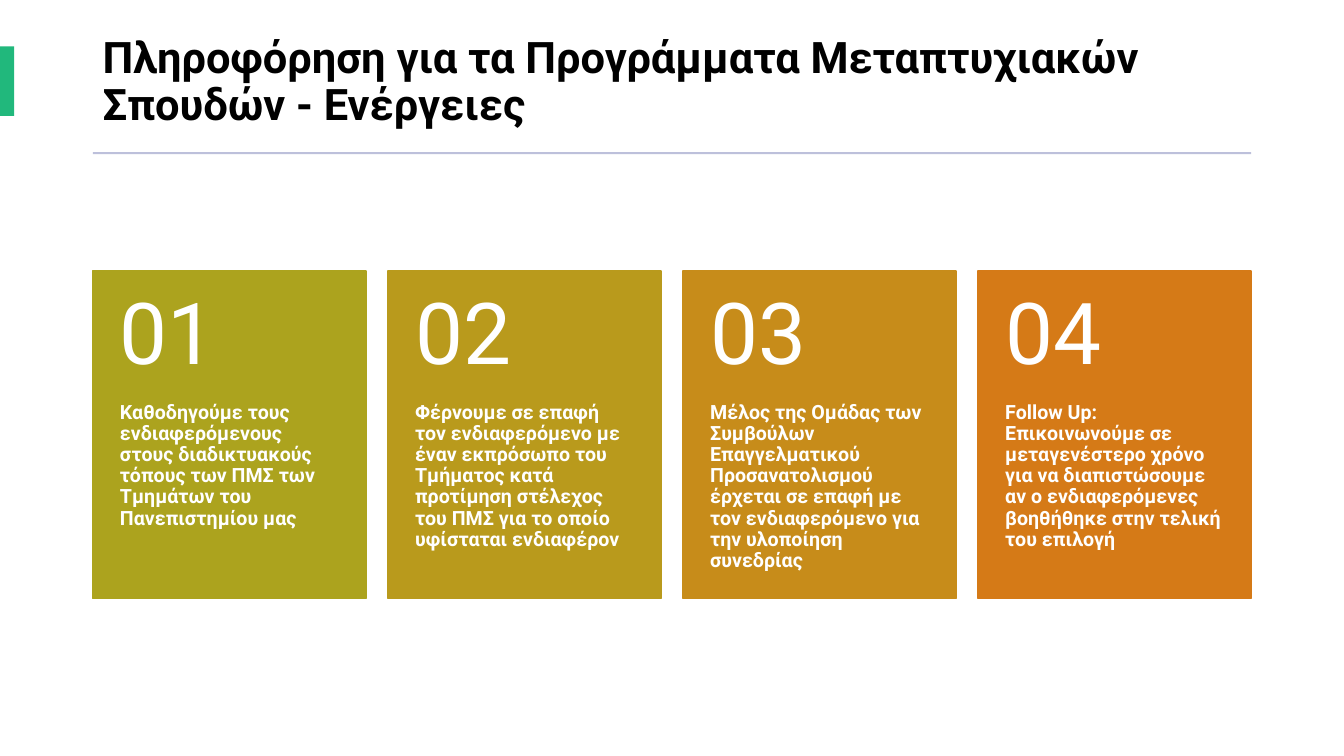
from pptx import Presentation
from pptx.dml.color import RGBColor
from pptx.enum.shapes import MSO_SHAPE as Shape
from pptx.enum.text import MSO_ANCHOR as Anchor
from pptx.util import Inches, Pt

TITLE = "Πληροφόρηση για τα Προγράμματα Μεταπτυχιακών Σπουδών - Ενέργειες"
CARDS = [
    ("ACA31E", "Καθοδηγούμε τους ενδιαφερόμενους στους διαδικτυακούς τόπους "
               "των ΠΜΣ των Τμημάτων του Πανεπιστημίου μας"),
    ("B99A1C", "Φέρνουμε σε επαφή τον ενδιαφερόμενο με έναν εκπρόσωπο του Τμήματος "
               "κατά προτίμηση στέλεχος του ΠΜΣ για το οποίο υφίσταται ενδιαφέρον"),
    ("C78C1A", "Μέλος της Ομάδας των Συμβούλων Επαγγελματικού Προσανατολισμού "
               "έρχεται σε επαφή με τον ενδιαφερόμενο για την υλοποίηση συνεδρίας"),
    ("D57A17", "Follow Up: Επικοινωνούμε σε μεταγενέστερο χρόνο για να διαπιστώσουμε "
               "αν ο ενδιαφερόμενες βοηθήθηκε στην τελική του επιλογή"),
]
COLORS = {"title": "000000", "text": "FFFFFF", "accent": "21B87C", "rule": "BDC0DB"}
FONT = "Roboto"

LEFT, WIDTH = 0.92, 11.49
CARD_TOP, CARD_WIDTH, CARD_HEIGHT = 2.69, 2.71, 3.25
NUMBER_HEIGHT = 1.3
CARD_STEP = (WIDTH - CARD_WIDTH) / (len(CARDS) - 1)


def add_block(slide, left, top, width, height, color, outlined=False):
    block = slide.shapes.add_shape(
        Shape.RECTANGLE, Inches(left), Inches(top), Inches(width), Inches(height))
    block.shadow.inherit = False
    block.fill.solid()
    block.fill.fore_color.rgb = RGBColor.from_string(color)
    if outlined:
        block.line.color.rgb = RGBColor.from_string(color)
        block.line.width = Pt(1)
    else:
        block.line.fill.background()


def add_text(slide, text, left, top, width, height, *, size, color=COLORS["text"],
             bold=False, anchor=Anchor.MIDDLE, insets=(0.1, 0.05, 0.1, 0.05)):
    """Add a wrapped text box; insets run left, top, right, bottom."""
    box = slide.shapes.add_textbox(
        Inches(left), Inches(top), Inches(width), Inches(height))
    frame = box.text_frame
    frame.word_wrap = True
    frame.vertical_anchor = anchor
    (frame.margin_left, frame.margin_top,
     frame.margin_right, frame.margin_bottom) = map(Inches, insets)
    para = frame.paragraphs[0]
    para.line_spacing = 0.9
    span = para.add_run()
    span.text = text
    span.font.name = FONT
    span.font.size = Pt(size)
    span.font.bold = bold
    span.font.color.rgb = RGBColor.from_string(color)


def add_card(slide, index, color, text):
    left = LEFT + index * CARD_STEP
    add_block(slide, left, CARD_TOP, CARD_WIDTH, CARD_HEIGHT, color, outlined=True)
    add_text(slide, text, left, CARD_TOP + NUMBER_HEIGHT, CARD_WIDTH,
             CARD_HEIGHT - NUMBER_HEIGHT, size=14, bold=True, anchor=Anchor.TOP,
             insets=(0.27, 0, 0.27, 0.36))
    add_text(slide, f"{index + 1:02}", left, CARD_TOP, CARD_WIDTH, NUMBER_HEIGHT,
             size=61, insets=(0.27, 0.18, 0.27, 0.18))


def main():
    deck = Presentation()
    deck.slide_width, deck.slide_height = Inches(13.33), Inches(7.5)
    slide = deck.slides.add_slide(deck.slide_layouts[6])
    add_text(slide, TITLE, LEFT, 0.27, WIDTH, 1.1, size=31,
             color=COLORS["title"], bold=True)
    add_block(slide, 0, 0.46, 0.14, 0.69, COLORS["accent"])
    add_block(slide, LEFT, 1.51, WIDTH, 0.02, COLORS["rule"])
    for index, (color, text) in enumerate(CARDS):
        add_card(slide, index, color, text)
    deck.save("out.pptx")


if __name__ == "__main__":
    main()
